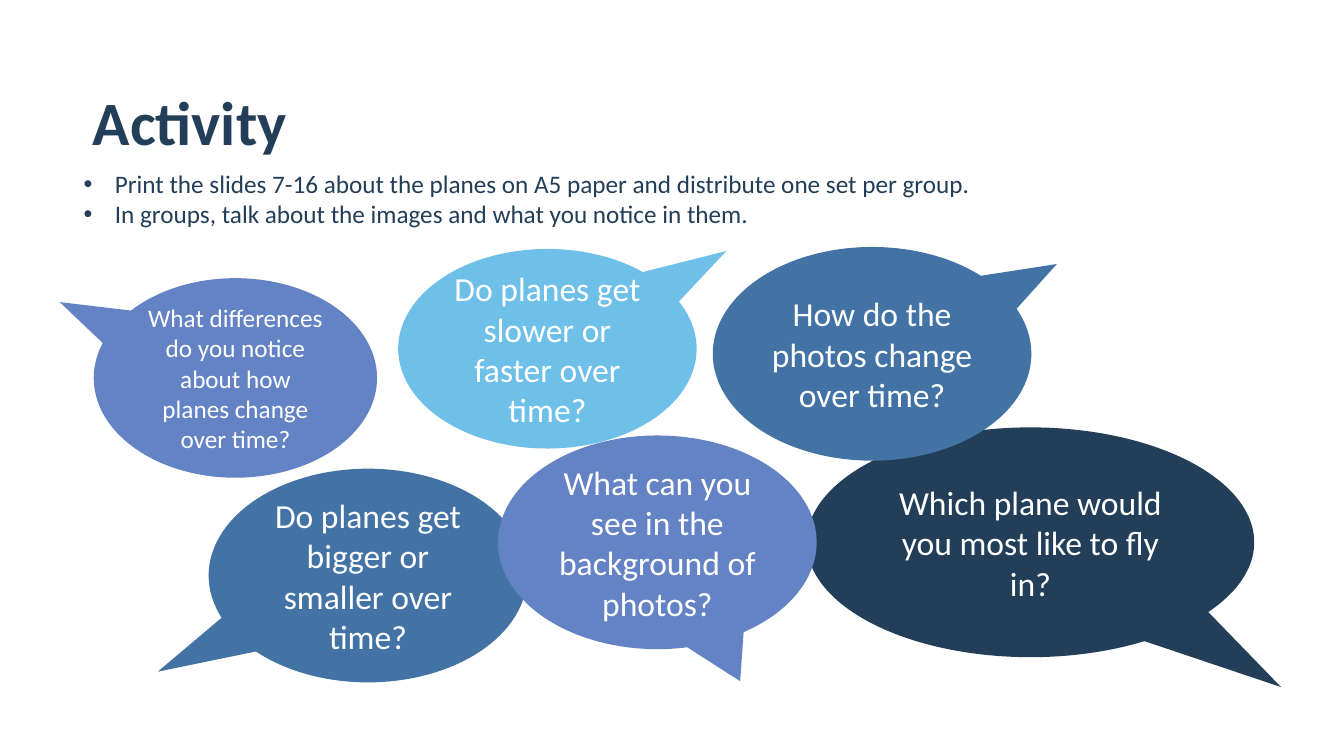
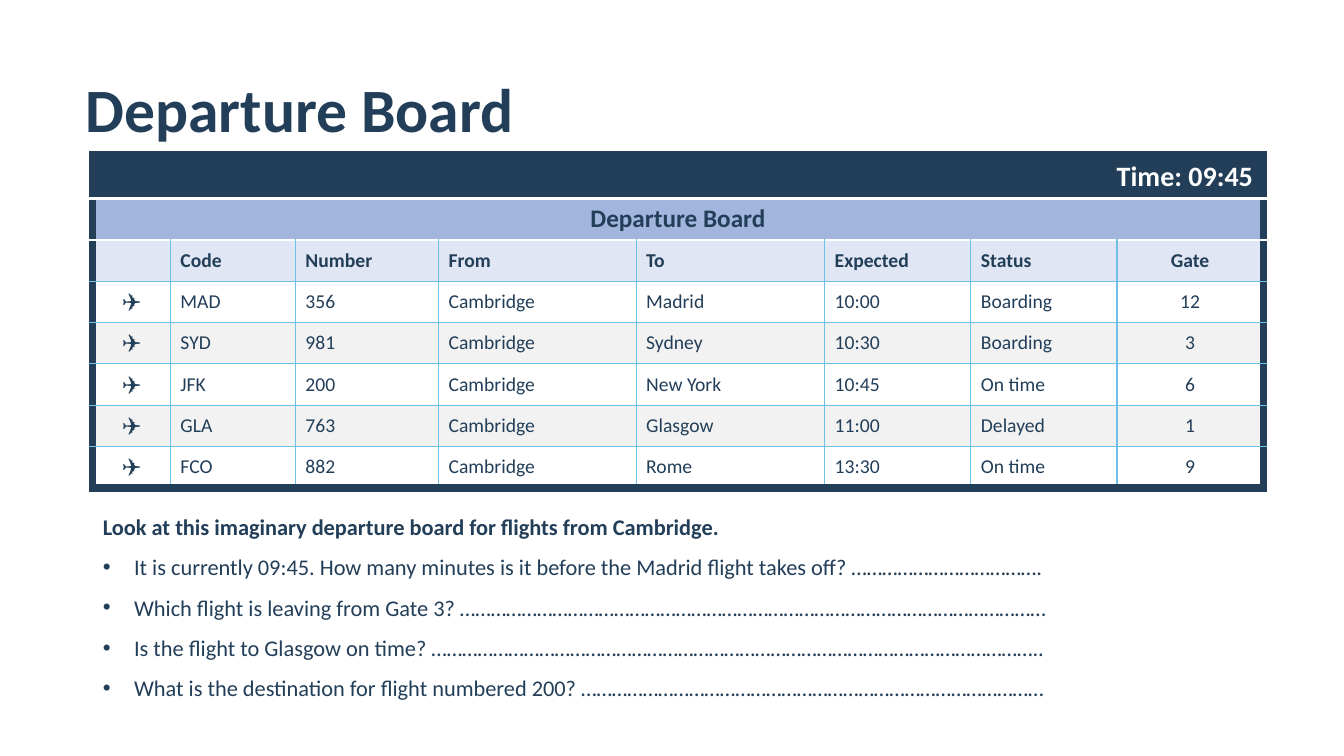
"""Build two classroom slides: a discussion activity and a departure board."""
from lxml.etree import SubElement
from pptx import Presentation
from pptx.dml.color import RGBColor
from pptx.enum.shapes import MSO_SHAPE
from pptx.enum.text import MSO_ANCHOR, MSO_AUTO_SIZE, PP_ALIGN
from pptx.oxml.ns import qn
from pptx.util import Emu, Pt

PX = 9144
COLOURS = {
    "navy": "223E58", "blue": "4372A5", "violet": "6483C4", "sky": "6EC0E8",
    "lilac": "A2B5DC", "pale": "E0E6F3", "grey": "F2F2F2", "white": "FFFFFF",
}
FONT = "Calibri"
BULLET_INDENT = 31
FRAME = {"word_wrap": True, "auto_size": MSO_AUTO_SIZE.NONE}

QUESTIONS = [
    ("What differences do you notice about how planes change over time?",
     (93, 276, 281, 198), (-0.62, -0.38), "violet", 18),
    ("Do planes get slower or faster over time?",
     (395, 247, 296, 198), (0.6, -0.49), "sky", 24),
    ("Do planes get bigger or smaller over time?",
     (207, 465, 316, 212), (-0.66, 0.45), "blue", 24),
    ("Which plane would you most like to fly in?",
     (800, 424, 444, 228), (0.56, 0.63), "navy", 24),
    ("What can you see in the background of photos?",
     (494, 432, 316, 212), (0.26, 0.65), "violet", 24),
    ("How do the photos change over time?",
     (707, 245, 316, 212), (0.58, -0.42), "blue", 24),
]
INSTRUCTIONS = [
    "Print the slides 7-16 about the planes on A5 paper and distribute one set per group.",
    "In groups, talk about the images and what you notice in them.",
]
BOARD_LEFT, BOARD_TOP = 92, 153
COLUMN_WIDTHS = [77, 124, 142, 196, 187, 145, 145, 145]
BANNER_HEIGHT, ROW_HEIGHT = 44, 41
HEADINGS = ["", "Code", "Number", "From", "To", "Expected", "Status", "Gate"]
FLIGHTS = [
    ("MAD", "356", "Madrid", "10:00", "Boarding", "12"),
    ("SYD", "981", "Sydney", "10:30", "Boarding", "3"),
    ("JFK", "200", "New York", "10:45", "On time", "6"),
    ("GLA", "763", "Glasgow", "11:00", "Delayed", "1"),
    ("FCO", "882", "Rome", "13:30", "On time", "9"),
]
EDGE, GRID = ("navy", 6), ("sky", 1)
TASK = "Look at this imaginary departure board for flights from Cambridge."
TASK_QUESTIONS = [
    "It is currently 09:45. How many minutes is it before the Madrid flight takes off? ……………………………….",
    "Which flight is leaving from Gate 3? ……………………………………………………………………………………………………",
    "Is the flight to Glasgow on time? ………………………………………………………………………………………………………..",
    "What is the destination for flight numbered 200? ………………………………………………………………………………",
]


def rgb(colour):
    """Return the colour stored under a name."""
    return RGBColor.from_string(COLOURS[colour])


def apply(target, values):
    """Set each attribute of the target from a dict."""
    for attribute, value in values.items():
        setattr(target, attribute, value)


def place(shape, box):
    """Move and size a shape from left, top, width and height in px."""
    apply(shape, dict(zip(("left", "top", "width", "height"),
                          (Emu(length * PX) for length in box))))


def write(paragraph, text, size, colour="navy", bold=False,
          align=PP_ALIGN.LEFT, spacing=1.0):
    """Put formatted text into a paragraph."""
    apply(paragraph, {"alignment": align, "line_spacing": spacing,
                      "space_before": Pt(0), "space_after": Pt(0)})
    run = paragraph.add_run()
    run.text = text
    apply(run.font, {"name": FONT, "size": Pt(size), "bold": bold})
    run.font.color.rgb = rgb(colour)


def set_bullet(paragraph, bulleted):
    """Give a paragraph a hanging bullet, or take its bullet away."""
    properties = paragraph._p.get_or_add_pPr()
    indent = BULLET_INDENT * PX if bulleted else 0
    properties.set("marL", str(indent))
    properties.set("indent", str(-indent))
    if bulleted:
        SubElement(properties, qn("a:buFont"), typeface="Arial")
        SubElement(properties, qn("a:buChar"), char="•")
    else:
        SubElement(properties, qn("a:buNone"))


def add_titled_slide(deck, title, left, top):
    """Add a slide with the shared title style."""
    slide = deck.slides.add_slide(deck.slide_layouts[1])
    place(slide.shapes.title, (left, top, 1150, 75))
    frame = slide.shapes.title.text_frame
    apply(frame, FRAME | {"vertical_anchor": MSO_ANCHOR.MIDDLE})
    write(frame.paragraphs[0], title, 44, bold=True, spacing=0.9)
    return slide


def fill_body(slide, box, bullets, size, spacing=1.0, heading=None):
    """Fill the body placeholder with an optional heading and bullets."""
    body = slide.placeholders[1]
    place(body, box)
    frame = body.text_frame
    apply(frame, FRAME | {"vertical_anchor": MSO_ANCHOR.TOP})
    lines = [(heading, False)] if heading else []
    lines += [(bullet, True) for bullet in bullets]
    for index, (text, bulleted) in enumerate(lines):
        paragraph = frame.add_paragraph() if index else frame.paragraphs[0]
        set_bullet(paragraph, bulleted)
        write(paragraph, text, size, bold=not bulleted,
              spacing=spacing if bulleted else 1.0)


def add_question(slide, text, box, pointer, colour, size):
    """Add a speech bubble whose pointer is given relative to its size."""
    bubble = slide.shapes.add_shape(MSO_SHAPE.OVAL_CALLOUT, 0, 0, 0, 0)
    place(bubble, box)
    for index, offset in enumerate(pointer):
        bubble.adjustments[index] = offset
    bubble.shadow.inherit = False
    bubble.fill.solid()
    bubble.fill.fore_color.rgb = rgb(colour)
    bubble.line.fill.background()
    frame = bubble.text_frame
    apply(frame, FRAME | {"vertical_anchor": MSO_ANCHOR.MIDDLE})
    write(frame.paragraphs[0], text, size, "white", align=PP_ALIGN.CENTER)


def style_cell(cell, fill, borders):
    """Fill a cell and draw its left, right, top and bottom borders."""
    properties = cell._tc.get_or_add_tcPr()
    for side, (colour, width) in zip("LRTB", borders):
        line = SubElement(properties, qn(f"a:ln{side}"), w=str(Pt(width)))
        solid = SubElement(line, qn("a:solidFill"))
        SubElement(solid, qn("a:srgbClr"), val=COLOURS[colour])
    cell.fill.solid()
    cell.fill.fore_color.rgb = rgb(fill)
    cell.vertical_anchor = MSO_ANCHOR.MIDDLE


def add_banner(board, row, text, fill, top, bottom, **font):
    """Merge a whole row of the board into one labelled cell."""
    banner = board.cell(row, 0)
    banner.merge(board.cell(row, len(COLUMN_WIDTHS) - 1))
    style_cell(banner, fill, (EDGE, EDGE, top, bottom))
    write(banner.text_frame.paragraphs[0], text, bold=True, **font)


def add_board_row(board, row, texts, fill, top, bottom, bold=False):
    """Write one row of cells, with heavy borders at the board's edges."""
    last = len(texts) - 1
    for column, text in enumerate(texts):
        cell = board.cell(row, column)
        style_cell(cell, fill, (GRID if column else EDGE,
                                EDGE if column == last else GRID, top, bottom))
        align = PP_ALIGN.CENTER if column in (0, last) else PP_ALIGN.LEFT
        if text:
            write(cell.text_frame.paragraphs[0], text, 14, bold=bold, align=align)


def add_board(slide):
    """Add the departure board table."""
    heights = [BANNER_HEIGHT] + [ROW_HEIGHT] * (len(FLIGHTS) + 2)
    box = (BOARD_LEFT, BOARD_TOP, sum(COLUMN_WIDTHS), sum(heights))
    board = slide.shapes.add_table(len(heights), len(COLUMN_WIDTHS),
                                   *(Emu(length * PX) for length in box)).table
    apply(board, {"first_row": False, "horz_banding": False})
    for column, width in zip(board.columns, COLUMN_WIDTHS):
        column.width = Emu(width * PX)
    for row, height in zip(board.rows, heights):
        row.height = Emu(height * PX)
    thin = ("white", 1)
    add_banner(board, 0, "Time: 09:45", "navy", EDGE, ("white", 3),
               size=20, colour="white", align=PP_ALIGN.RIGHT)
    add_banner(board, 1, "Departure Board", "lilac", thin, thin,
               size=18, align=PP_ALIGN.CENTER)
    add_board_row(board, 2, HEADINGS, "pale", thin, GRID, bold=True)
    for index, (code, number, *details) in enumerate(FLIGHTS):
        add_board_row(board, index + 3, ["✈", code, number, "Cambridge", *details],
                      "grey" if index % 2 else "white", GRID,
                      EDGE if index == len(FLIGHTS) - 1 else GRID)


def main():
    """Build and save the deck."""
    deck = Presentation()
    apply(deck, {"slide_width": Emu(1333 * PX), "slide_height": Emu(750 * PX)})

    activity = add_titled_slide(deck, "Activity", 82, 87)
    fill_body(activity, (73, 162, 1133, 71), INSTRUCTIONS, 18)
    for question in QUESTIONS:
        add_question(activity, *question)

    departures = add_titled_slide(deck, "Departure Board", 75, 74)
    add_board(departures)
    fill_body(departures, (92, 504, 1075, 194), TASK_QUESTIONS, 16, 1.5, TASK)

    deck.save("out.pptx")


if __name__ == "__main__":
    main()
